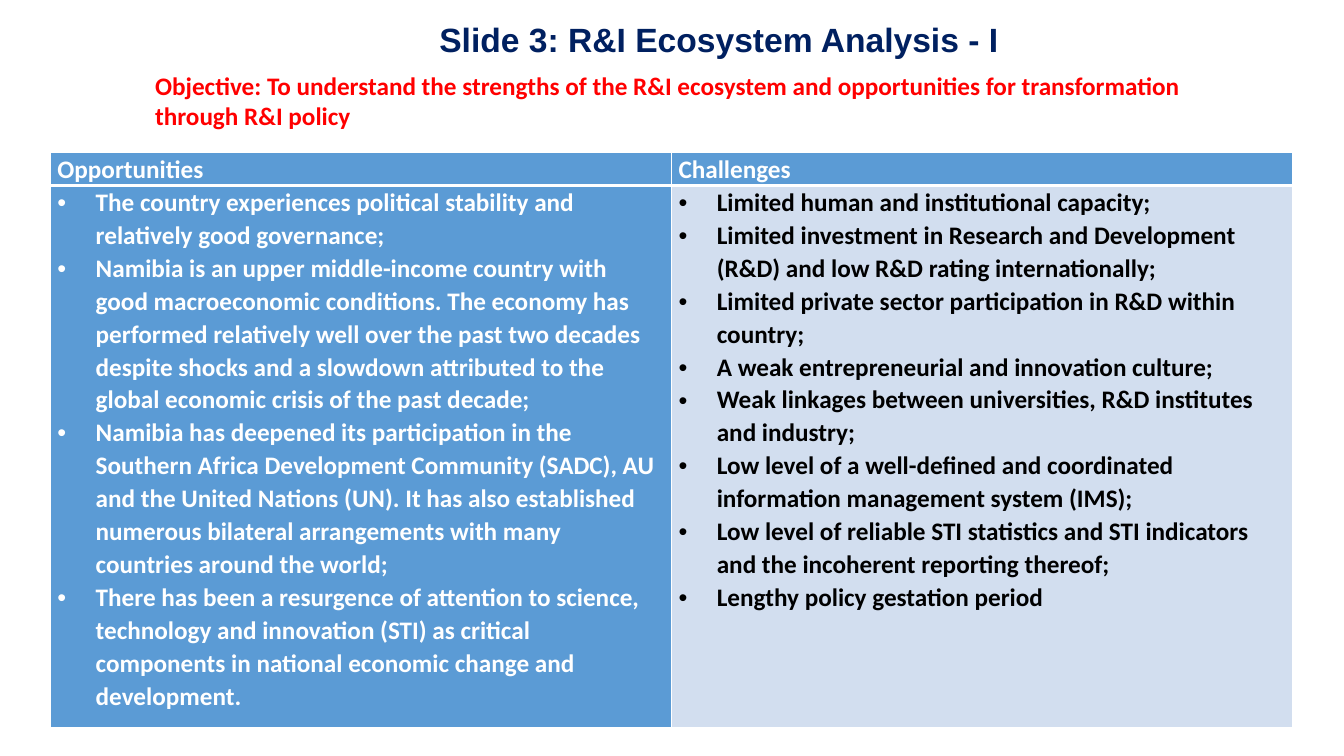
from dataclasses import dataclass

from lxml.etree import SubElement
from pptx import Presentation
from pptx.dml.color import RGBColor
from pptx.enum.text import PP_ALIGN
from pptx.oxml import parse_xml
from pptx.oxml.ns import nsdecls, qn
from pptx.util import Inches, Pt


@dataclass(frozen=True)
class Theme:
    navy: str = "002060"
    red: str = "FF0000"
    blue: str = "5B9BD5"
    pale_blue: str = "D2DEEF"
    white: str = "FFFFFF"
    black: str = "000000"
    title_font: str = "Arial"
    body_font: str = "Calibri"
    title_size: int = 24
    body_size: int = 18


THEME = Theme()

TITLE = "Slide 3: R&I Ecosystem Analysis - I"
OBJECTIVE = (
    "Objective: To understand the strengths of the R&I ecosystem and "
    "opportunities for transformation through R&I policy"
)
OPPORTUNITIES = [
    "The country experiences political stability and relatively good governance;",
    "Namibia is an upper middle-income country with good macroeconomic conditions. "
    "The economy has performed relatively well over the past two decades despite "
    "shocks and a slowdown attributed to the global economic crisis of the past decade;",
    "Namibia has deepened its participation in the Southern Africa Development "
    "Community (SADC), AU and the United Nations (UN). It has also established "
    "numerous bilateral arrangements with many countries around the world;",
    "There has been a resurgence of attention to science, technology and innovation "
    "(STI) as critical components in national economic change and development.",
]
CHALLENGES = [
    "Limited human and institutional capacity;",
    "Limited investment in Research and Development (R&D) and low R&D rating "
    "internationally;",
    "Limited private sector participation in R&D within country;",
    "A weak entrepreneurial and innovation culture;",
    "Weak linkages between universities, R&D institutes and industry;",
    "Low level of a well-defined and coordinated information management system (IMS);",
    "Low level of reliable STI statistics and STI indicators and the incoherent "
    "reporting thereof;",
    "Lengthy policy gestation period",
]


def style_paragraph(paragraph, color, name=THEME.body_font, size=THEME.body_size):
    font = paragraph.font
    font.name = name
    font.size = Pt(size)
    font.bold = True
    font.color.rgb = RGBColor.from_string(color)


def set_indent(paragraph, left, first_line=0):
    properties = paragraph._p.get_or_add_pPr()
    properties.set("marL", str(Inches(left)))
    properties.set("indent", str(Inches(first_line)))
    return properties


def add_bullet(paragraph):
    """Give the paragraph a hanging round bullet; call before setting its font."""
    properties = set_indent(paragraph, 0.38, -0.38)
    SubElement(properties, qn("a:buFont"), typeface="Arial")
    SubElement(properties, qn("a:buChar"), char="•")


def add_text(slide, text, left, top, width, height):
    box = slide.shapes.add_textbox(
        Inches(left), Inches(top), Inches(width), Inches(height)
    )
    box.text_frame.word_wrap = True
    paragraph = box.text_frame.paragraphs[0]
    paragraph.text = text
    return paragraph


def set_borders(cell, **widths):
    """Draw white borders, given as side=points in the order L, R, T, B."""
    for position, (side, points) in enumerate(widths.items()):
        border = parse_xml(
            f'<a:ln{side} {nsdecls("a")} w="{Pt(points)}"><a:solidFill>'
            f'<a:srgbClr val="{THEME.white}"/></a:solidFill></a:ln{side}>'
        )
        cell._tc.get_or_add_tcPr().insert(position, border)


def fill_cell(cell, lines, fill, color, bulleted=False):
    cell.margin_left = cell.margin_right = Inches(0.07)
    cell.margin_top = cell.margin_bottom = 0
    cell.fill.solid()
    cell.fill.fore_color.rgb = RGBColor.from_string(fill)
    cell.text = "\n".join(lines)
    for paragraph in cell.text_frame.paragraphs:
        paragraph.line_spacing = 1.07
        if bulleted:
            add_bullet(paragraph)
        style_paragraph(paragraph, color)


def add_comparison(slide, columns):
    """Add a table with one (heading, points, fill, text colour) per column."""
    table = slide.shapes.add_table(
        2, len(columns), Inches(0.5), Inches(1.51), Inches(12.32), Inches(5.71)
    ).table
    table.first_col = True
    table.horz_banding = False
    for row, height in zip(table.rows, (0.33, 5.38)):
        row.height = Inches(height)
    for index, (heading, points, fill, color) in enumerate(columns):
        header, body = table.cell(0, index), table.cell(1, index)
        fill_cell(header, [heading], THEME.blue, THEME.white)
        fill_cell(body, points, fill, color, bulleted=True)
        set_borders(header, L=1, R=1, T=1, B=3)
        set_borders(body, L=1, R=1, T=3, B=1)


def main():
    presentation = Presentation()
    presentation.slide_width = Inches(13.33)
    presentation.slide_height = Inches(7.5)
    slide = presentation.slides.add_slide(presentation.slide_layouts[6])

    title = add_text(slide, TITLE, 2.29, 0.14, 9.68, 0.5)
    title.alignment = PP_ALIGN.CENTER
    style_paragraph(title, THEME.navy, THEME.title_font, THEME.title_size)

    objective = add_text(slide, OBJECTIVE, 1.14, 0.65, 11.03, 0.71)
    set_indent(objective, 0.3)
    style_paragraph(objective, THEME.red)

    add_comparison(slide, [
        ("Opportunities", OPPORTUNITIES, THEME.blue, THEME.white),
        ("Challenges", CHALLENGES, THEME.pale_blue, THEME.black),
    ])
    presentation.save("out.pptx")


if __name__ == "__main__":
    main()
